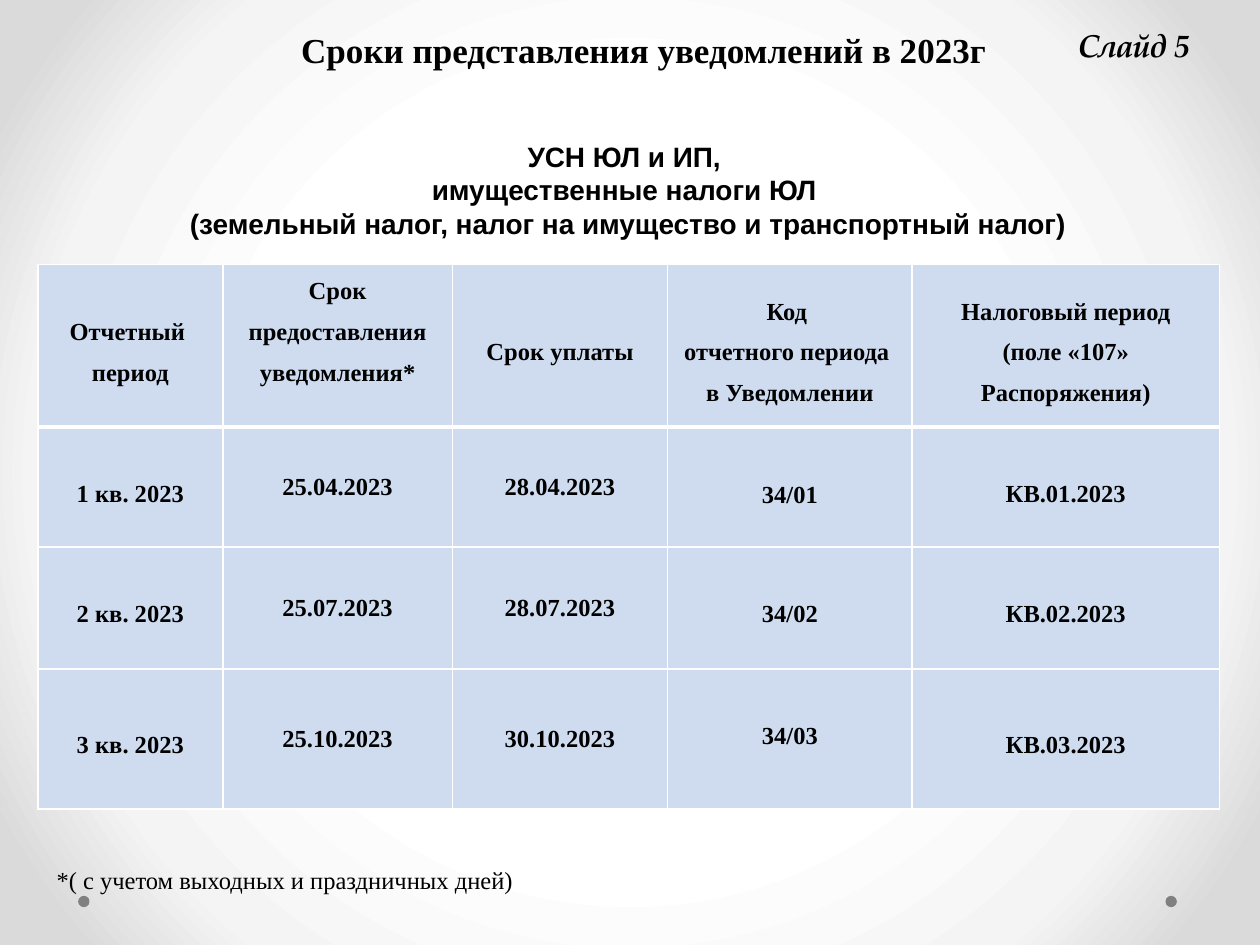
"""Builds the slide with the 2023 notification deadlines."""
from dataclasses import dataclass

from lxml import etree
from pptx import Presentation
from pptx import util as u
from pptx.dml.color import RGBColor
from pptx.enum import shapes, text
from pptx.oxml import ns


@dataclass(frozen=True)
class Theme:
    ink: str = "000000"
    rule: str = "FFFFFF"
    cell: str = "CFDCF0"
    dot: str = "808080"
    glow: tuple = ((50, "FFFFFF"), (76, "F4F4F4"), (92, "DADADA"))
    serif: str = "Times New Roman"
    sans: str = "Arial"
    script: str = "TeX Gyre Pagella"
    heading: int = 20
    label: int = 18
    subject: int = 16
    body: int = 14


def format_text(frame, wording, *, font, size, color, bold=False, italic=False,
                align=text.PP_ALIGN.CENTER, spacing=1.0):
    frame.text = wording
    for line in frame.paragraphs:
        line.alignment = align
        line.line_spacing = spacing
        for run in line.runs:
            run.font.name = font
            run.font.size = u.Pt(size)
            run.font.bold = bold
            run.font.italic = italic
            run.font.color.rgb = RGBColor.from_string(color)


def add_color(parent, color):
    etree.SubElement(parent, ns.qn("a:srgbClr"), val=color)


class Deadlines:
    def __init__(self, theme):
        self.theme = theme
        self.deck = Presentation()
        self.deck.slide_width, self.deck.slide_height = u.Inches(10), u.Inches(7.5)
        self.slide = self.deck.slides.add_slide(self.deck.slide_layouts[5])

    def backdrop(self):
        fill = self.slide.background.fill
        fill.solid()
        solid = self.slide.element.find(".//" + ns.qn("a:solidFill"))
        glow = etree.Element(ns.qn("a:gradFill"), rotWithShape="1")
        stops = etree.SubElement(glow, ns.qn("a:gsLst"))
        for percent, color in self.theme.glow:
            add_color(etree.SubElement(stops, ns.qn("a:gs"), pos=str(percent * 1000)), color)
        circle = etree.SubElement(glow, ns.qn("a:path"), attrib={"path": "circle"})
        etree.SubElement(circle, ns.qn("a:fillToRect"),
                         attrib=dict.fromkeys("ltrb", "50000"))
        solid.getparent().replace(solid, glow)

    def dot(self, left):
        dot = self.slide.shapes.add_shape(
            shapes.MSO_SHAPE.OVAL, u.Inches(left), u.Inches(7.11), u.Inches(0.09), u.Inches(0.09))
        dot.shadow.inherit = False
        dot.fill.solid()
        dot.fill.fore_color.rgb = RGBColor.from_string(self.theme.dot)
        dot.line.fill.background()

    def heading(self, wording, box):
        heading = self.slide.shapes.title
        heading.left, heading.top, heading.width, heading.height = map(u.Inches, box)
        heading.text_frame.auto_size = text.MSO_AUTO_SIZE.NONE
        heading.text_frame.vertical_anchor = text.MSO_ANCHOR.TOP
        format_text(heading.text_frame, wording, font=self.theme.serif,
                    size=self.theme.heading, color=self.theme.ink, bold=True)

    def caption(self, wording, box, wrap=False, anchor=text.MSO_ANCHOR.TOP, **style):
        frame = self.slide.shapes.add_textbox(*map(u.Inches, box)).text_frame
        frame.word_wrap = wrap
        frame.vertical_anchor = anchor
        format_text(frame, wording, color=self.theme.ink, **style)

    def cell(self, cell, wording, widths, spacing, anchor, top):
        cell.margin_left = cell.margin_right = u.Inches(0.07)
        cell.margin_top, cell.margin_bottom = u.Inches(top), 0
        cell.vertical_anchor = anchor
        format_text(cell.text_frame, wording, font=self.theme.serif, size=self.theme.body,
                    color=self.theme.ink, bold=True, spacing=spacing)
        cell.fill.solid()
        cell.fill.fore_color.rgb = RGBColor.from_string(self.theme.cell)
        properties = cell._tc.get_or_add_tcPr()
        for place, (side, width) in enumerate(widths.items()):
            border = etree.Element(ns.qn(f"a:ln{side}"), w=str(u.Pt(width)))
            add_color(etree.SubElement(border, ns.qn("a:solidFill")), self.theme.rule)
            properties.insert(place, border)

    def schedule(self, rows, corner, widths, heights):
        frame = self.slide.shapes.add_table(
            len(rows), len(widths), *map(u.Inches, (*corner, sum(widths), sum(heights))))
        grid = frame.table
        for column, width in zip(grid.columns, widths):
            column.width = u.Inches(width)
        for row, height in zip(grid.rows, heights):
            row.height = u.Inches(height)
        for r, row in enumerate(rows):
            for c, wording in enumerate(row):
                code = r > 0 and c == 3
                high = code or (r == 0 and c == 1)
                borders = {"L": 1, "R": 1, "T": 3 if r == 1 else 1, "B": 3 if r == 0 else 1}
                self.cell(grid.cell(r, c), wording, borders,
                          spacing=1.5 if r == 0 or c in (0, 4) else 1.0,
                          anchor=text.MSO_ANCHOR.TOP if high else text.MSO_ANCHOR.MIDDLE,
                          top=0.43 if code else 0)


def main():
    theme = Theme()
    page = Deadlines(theme)
    page.backdrop()
    for left in (9.25, 0.62):
        page.dot(left)
    page.caption("*( с учетом выходных и праздничных дней)", (0.35, 6.82, 3.85, 0.34),
                 font=theme.serif, size=theme.body, align=text.PP_ALIGN.LEFT)
    header = ("Отчетный \nпериод", "Срок предоставления уведомления*", "Срок уплаты",
              "Код \nотчетного периода \nв Уведомлении",
              "Налоговый период\n(поле «107»\nРаспоряжения)")
    dates = (("25.04.2023", "28.04.2023"), ("25.07.2023", "28.07.2023"),
             ("25.10.2023", "30.10.2023"))
    quarters = [(f"{n} кв. 2023", notice, payment, f"34/0{n}", f"КВ.0{n}.2023")
                for n, (notice, payment) in enumerate(dates, 1)]
    page.schedule([header, *quarters], (0.3, 2.1),
                  (1.47, 1.82, 1.71, 1.94, 2.44), (1.29, 0.95, 0.97, 1.11))
    page.caption("УСН ЮЛ и ИП, \nимущественные налоги ЮЛ \n"
                 "(земельный налог, налог на имущество и транспортный налог)",
                 (0.21, 1.05, 9.55, 0.91), wrap=True, anchor=text.MSO_ANCHOR.MIDDLE,
                 font=theme.sans, size=theme.subject, bold=True)
    page.heading("Сроки представления уведомлений в 2023г", (0.58, 0.18, 9.06, 0.44))
    page.caption("Слайд 5", (8.46, 0.16, 1.17, 0.4), font=theme.script, size=theme.label,
                 bold=True, italic=True, align=text.PP_ALIGN.LEFT)
    page.deck.save("out.pptx")


if __name__ == "__main__":
    main()
